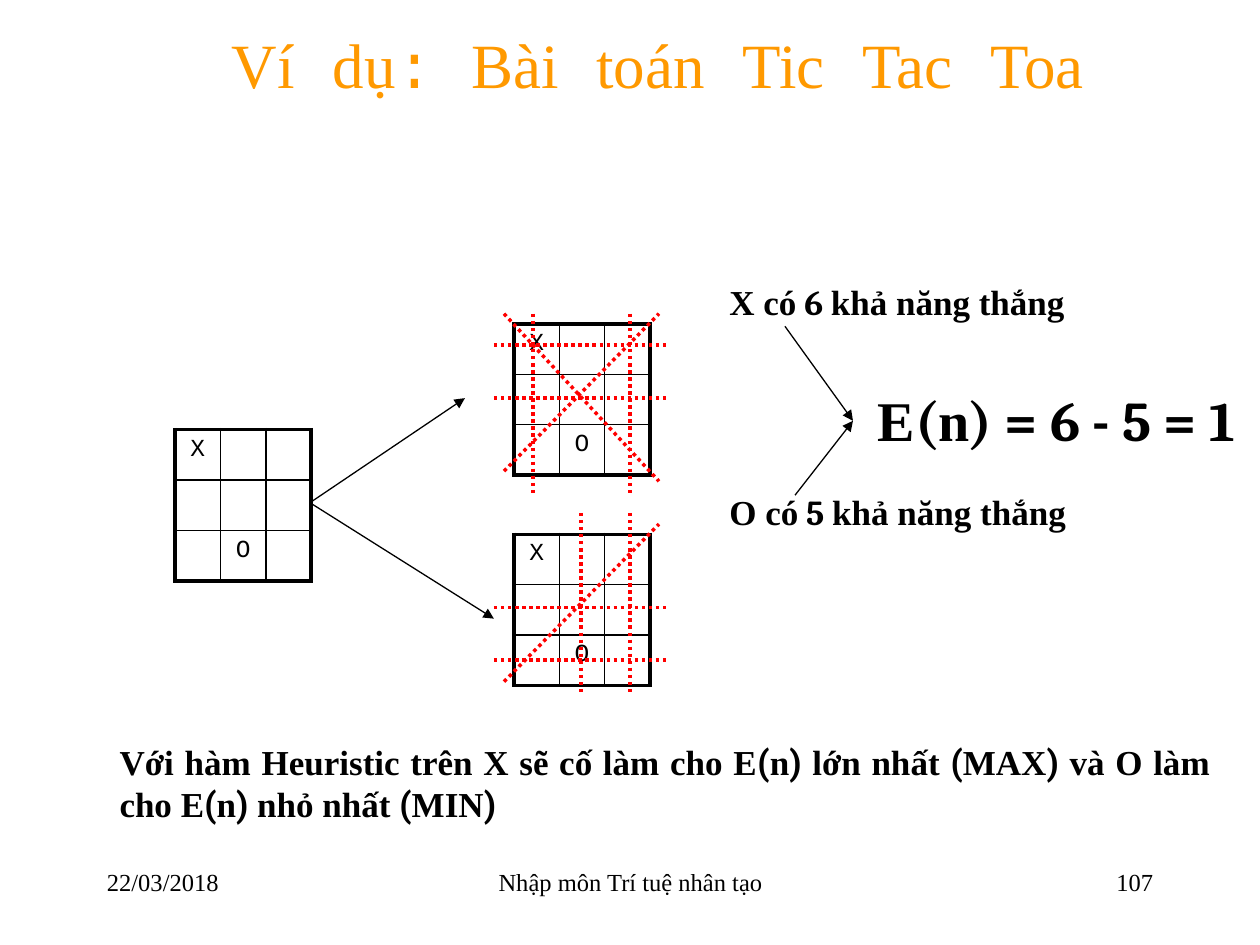
"""Builds the Tic Tac Toa heuristic evaluation slide."""
from lxml import etree
from pptx import Presentation, util as u
from pptx.dml.color import RGBColor
from pptx.enum import dml, shapes, text
from pptx.oxml import ns

BLACK, RED, ORANGE = "000000", "FF0000", "FF9900"
TIMES, COURIER, CAMBRIA, ROBOTO = "Times New Roman", "Courier New", "Cambria", "Roboto"
AL = text.PP_ALIGN

TITLE = ["Ví", " ", "dụ", ": ", "Bài", " ", "toán", " ", "Tic", " ", "Tac", " ", "Toa"]
FOOTERS = [
    (0.75, 2.08, "22/03/2018", AL.LEFT),
    (3.42, 3.17, "Nhập môn Trí tuệ nhân tạo", AL.CENTER),
    (7.17, 2.08, "107", AL.RIGHT),
]
SUMMARY = ["Với hàm Heuristic trên X sẽ cố làm cho E", "(", "n", ") ", "lớn nhất", " (", "MAX", ") ",
           "và O làm cho E", "(", "n", ") ", "nhỏ nhất", " (", "MIN", ")"]
NOTES = [
    ((5.69, 2.18, 2.92, 0.43), ["X có", " 6 ", "khả năng thắng"], CAMBRIA, 20, AL.LEFT),
    ((5.69, 3.84, 2.92, 0.43), ["O có", " 5 ", "khả năng thắng"], CAMBRIA, 20, AL.LEFT),
    ((6.77, 3.01, 3.23, 0.63), ["E", "(", "n", ") = 6 - 5 = 1"], CAMBRIA, 32, AL.CENTER),
    ((0.85, 5.83, 8.85, 0.77), SUMMARY, ROBOTO, 20, AL.JUSTIFY),
]
BOARDS = [(1.39, 3.41), (4.08, 2.57), (4.08, 4.24)]
MARKS = {(0, 0): "X", (2, 1): "O"}
CELL_W, CELL_H, SIDE = 0.36, 0.39, 3
ARROWS = [
    (2.46, 3.99, 3.69, 3.16), (2.46, 3.99, 3.92, 4.91),
    (6.23, 2.59, 6.77, 3.34), (6.31, 3.93, 6.77, 3.34),
]
ROW_SPAN = (3.92, 5.31)
WINS = [
    {"rows": (2.74, 3.16), "cols": (4.23, 5), "span": (2.49, 3.91),
     "diagonals": [(4, 2.49, 5.23, 3.82), (4, 3.74, 5.23, 2.49)]},
    {"rows": (4.82, 5.24), "cols": (4.61, 5), "span": (4.07, 5.49),
     "diagonals": [(4, 5.41, 5.23, 4.16)]},
]


def rgb(value):
    return RGBColor.from_string(value)


def write(tf, parts, fonts, size, color=BLACK, bold=False, align=AL.LEFT):
    """Fills the first paragraph with runs that alternate between two fonts."""
    p = tf.paragraphs[0]
    p.alignment = align
    for i, part in enumerate(parts):
        r = p.add_run()
        r.text = part
        r.font.color.rgb = rgb(color)
        for name, value in {"name": fonts[i % 2], "size": u.Pt(size), "bold": bold}.items():
            setattr(r.font, name, value)


def add_text(s, box, *args, **formats):
    tf = s.shapes.add_textbox(*map(u.Inches, box)).text_frame
    tf.word_wrap = True
    write(tf, *args, **formats)


def add_line(s, ends, color, width, dash=None, arrow=False):
    sp = s.shapes.add_connector(shapes.MSO_CONNECTOR.STRAIGHT, *map(u.Inches, ends))
    sp.line.color.rgb = rgb(color)
    sp.line.width = u.Pt(width)
    if dash:
        sp.line.dash_style = dash
    if arrow:
        etree.SubElement(sp.line._get_or_add_ln(), ns.qn("a:tailEnd"), type="triangle")
    etree.SubElement(sp._element.spPr, ns.qn("a:effectLst"))


def add_borders(cell, row, col):
    """Draws heavy borders on the rim of the board and thin ones inside."""
    tc_pr = cell._tc.get_or_add_tcPr()
    rims = {"lnL": col == 0, "lnR": col == SIDE - 1, "lnT": row == 0, "lnB": row == SIDE - 1}
    for i, (tag, rim) in enumerate(rims.items()):
        ln = etree.Element(ns.qn(f"a:{tag}"), w=str(u.Pt(2.25 if rim else 1)))
        fill = etree.SubElement(ln, ns.qn("a:solidFill"))
        etree.SubElement(fill, ns.qn("a:srgbClr"), val=BLACK)
        tc_pr.insert(i, ln)


def add_board(s, left, top):
    size = (left, top, SIDE * CELL_W, SIDE * CELL_H)
    table = s.shapes.add_table(SIDE, SIDE, *map(u.Inches, size)).table
    table.first_row = table.horz_banding = False
    for i in range(SIDE):
        table.columns[i].width = u.Inches(CELL_W)
        table.rows[i].height = u.Inches(CELL_H)
        for j in range(SIDE):
            cell = table.cell(i, j)
            cell.fill.background()
            add_borders(cell, i, j)
            if (i, j) in MARKS:
                write(cell.text_frame, [MARKS[i, j]], (COURIER, COURIER), 14, align=AL.CENTER)


def main():
    prs = Presentation()
    prs.slide_width, prs.slide_height = u.Inches(10), u.Inches(7.5)
    s = prs.slides.add_slide(prs.slide_layouts[5])

    title = s.shapes.title
    for name, value in {"left": 0.61, "top": 0.17, "width": 9.22, "height": 0.67}.items():
        setattr(title, name, u.Inches(value))
    title.text_frame.vertical_anchor = text.MSO_ANCHOR.MIDDLE
    write(title.text_frame, TITLE, (TIMES, COURIER), 36, ORANGE, align=AL.CENTER)

    for left, width, words, align in FOOTERS:
        add_text(s, (left, 6.83, width, 0.5), [words], (TIMES, TIMES), 14, align=align)
    for board in BOARDS:
        add_board(s, *board)
    for ends in ARROWS:
        add_line(s, ends, BLACK, 0.75, arrow=True)
    for win in WINS:
        (x1, x2), (y1, y2) = ROW_SPAN, win["span"]
        rows = [(x1, y, x2, y) for y in win["rows"]]
        cols = [(x, y1, x, y2) for x in win["cols"]]
        for ends in rows + cols + win["diagonals"]:
            add_line(s, ends, RED, 2, dash=dml.MSO_LINE.ROUND_DOT)
    for box, parts, font, size, align in NOTES:
        add_text(s, box, parts, (TIMES, font), size, bold=True, align=align)

    prs.save("out.pptx")


if __name__ == "__main__":
    main()
